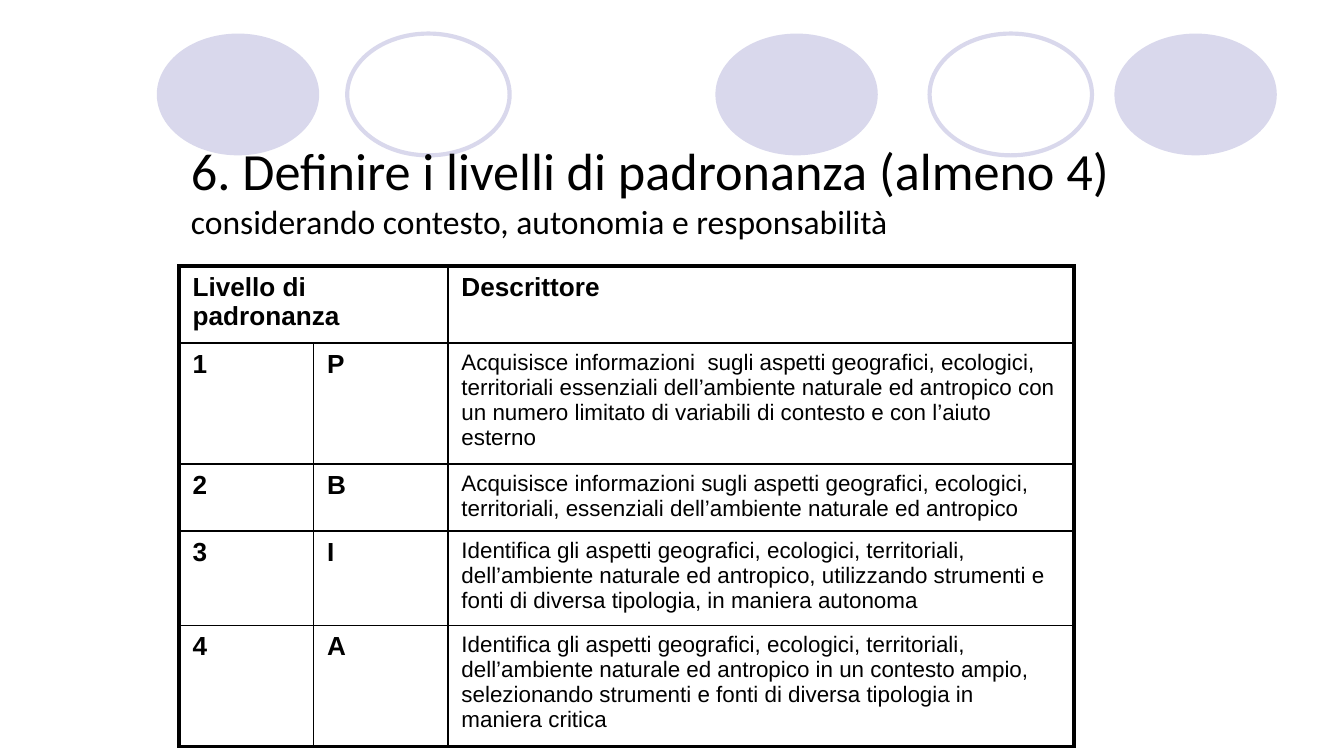
from lxml import etree
from pptx import Presentation
from pptx.dml.color import RGBColor
from pptx.enum.shapes import MSO_SHAPE
from pptx.oxml.ns import qn
from pptx.util import Pt

OVAL = MSO_SHAPE.OVAL
PX = 9525

THEME = {
    "lilac": "D9D8EC", "ink": "000000",
    "title_font": "Calibri", "table_font": "Arial",
    "title": 28, "subtitle": 18, "label": 14, "body": 12,
    "thick": 2.25, "thin": 1,
}


def style_text(paragraph, font_name, size, bold=False):
    for run in paragraph.runs:
        run.font.name = font_name
        run.font.size = Pt(size)
        run.font.bold = bold
        run.font.color.rgb = RGBColor.from_string(THEME["ink"])


def add_border(cell, side, width):
    line = etree.SubElement(cell._tc.get_or_add_tcPr(), qn(f"a:ln{side}"), w=str(Pt(width)))
    fill = etree.SubElement(line, qn("a:solidFill"))
    etree.SubElement(fill, qn("a:srgbClr"), val=THEME["ink"])


prs = Presentation()
prs.slide_width, prs.slide_height = 960 * PX, 540 * PX
slide = prs.slides.add_slide(prs.slide_layouts[6])

lilac = RGBColor.from_string(THEME["lilac"])
for left, filled in [(511, True), (796, True), (112, True), (664, False), (248, False)]:
    oval = slide.shapes.add_shape(OVAL, left * PX, 24 * PX, 116 * PX, 87 * PX)
    oval.shadow.inherit = False
    if filled:
        oval.fill.solid()
        oval.fill.fore_color.rgb = lilac
        oval.line.fill.background()
    else:
        oval.fill.background()
        oval.line.color.rgb = lilac
        oval.line.width = Pt(THEME["thick"])

heading = slide.shapes.add_textbox(127 * PX, 94 * PX, 833 * PX, 173 * PX).text_frame
heading.word_wrap = True
heading.text = ("6. Definire i livelli di padronanza (almeno 4)\n"
                "considerando contesto, autonomia e responsabilità")
for paragraph, level in zip(heading.paragraphs, ("title", "subtitle")):
    style_text(paragraph, THEME["title_font"], THEME[level])

levels = [
    ("Livello di padronanza", "", "Descrittore"),
    ("1", "P", "Acquisisce informazioni  sugli aspetti geografici, ecologici, territoriali "
     "essenziali dell’ambiente naturale ed antropico con un numero limitato di variabili "
     "di contesto e con l’aiuto esterno"),
    ("2", "B", "Acquisisce informazioni sugli aspetti geografici, ecologici, territoriali, "
     "essenziali dell’ambiente naturale ed antropico"),
    ("3", "I", "Identifica gli aspetti geografici, ecologici, territoriali, dell’ambiente "
     "naturale ed antropico, utilizzando strumenti e fonti di diversa tipologia, "
     "in maniera autonoma"),
    ("4", "A", "Identifica gli aspetti geografici, ecologici, territoriali, dell’ambiente "
     "naturale ed antropico in un contesto ampio, selezionando strumenti e fonti "
     "di diversa tipologia in maniera critica"),
]
column_widths = (96, 96, 447)
row_heights = (55, 86, 48, 67, 86)
last_row, last_column = len(row_heights) - 1, len(column_widths) - 1

mastery = slide.shapes.add_table(
    len(row_heights), len(column_widths), 128 * PX, 190 * PX,
    sum(column_widths) * PX, sum(row_heights) * PX).table
mastery.first_row = False
mastery.horz_banding = False
for column, width in zip(mastery.columns, column_widths):
    column.width = width * PX
for row, height in zip(mastery.rows, row_heights):
    row.height = height * PX
mastery.cell(0, 0).merge(mastery.cell(0, 1))

for r, texts in enumerate(levels):
    for c, text in enumerate(texts):
        cell = mastery.cell(r, c)
        outer_edges = {"L": c == 0, "R": c == last_column, "T": r == 0, "B": r == last_row}
        for side, outer in outer_edges.items():
            add_border(cell, side, THEME["thick" if outer else "thin"])
        cell.fill.background()
        cell.text_frame.text = text
        is_label = r == 0 or c < last_column
        style_text(cell.text_frame.paragraphs[0], THEME["table_font"],
                   THEME["label" if is_label else "body"], is_label)

prs.save("out.pptx")
